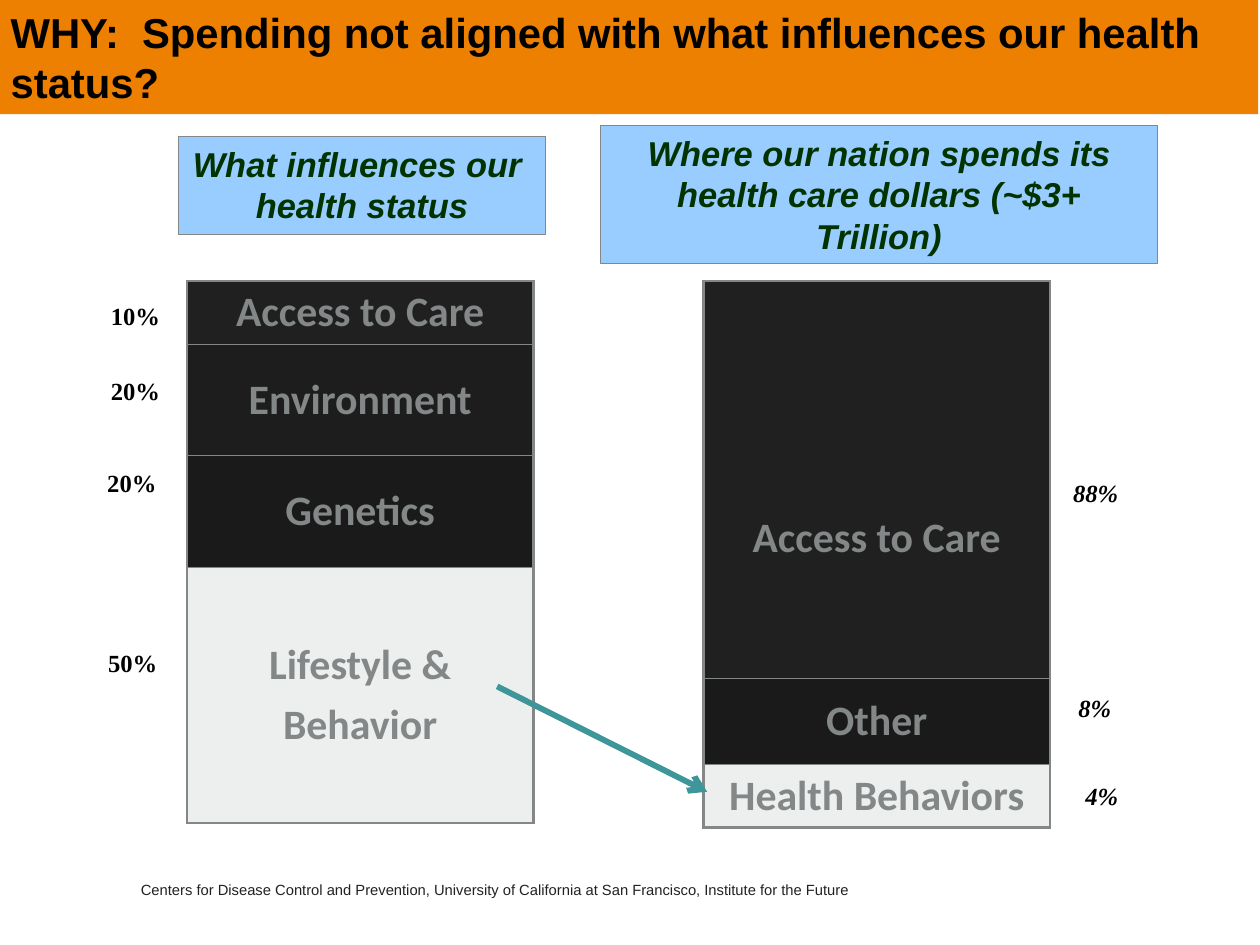
from lxml import etree
from pptx import Presentation
from pptx import util as u
from pptx.dml.color import RGBColor
from pptx.enum import shapes, text
from pptx.oxml import ns

PX = 9144
COLORS = {
    "banner": "ED8000", "heading": "99CCFF", "heading_text": "003300",
    "gray": "838787", "care": "202020", "environment": "1D1D1D",
    "dark": "1A1A1A", "light": "EDEEEE", "arrow": "3F969A",
    "black": "000000", "source": "222222",
}
INFLUENCES = [
    ("Access to Care", 71, "care", 0),
    ("Environment", 126, "environment", 0),
    ("Genetics", 126, "dark", 0),
    ("Lifestyle &\nBehavior", 289, "light", 0),
]
SPENDING = [
    ("Access to Care", 449, "care", 132),
    ("Other", 97, "dark", 0),
    ("Health Behaviors", 71, "light", 0),
]
INFLUENCE_SHARES = [("10%", 111, 333), ("20%", 111, 417), ("20%", 107, 521), ("50%", 108, 725)]
SPENDING_SHARES = [("88%", 1197, 533, 80), ("8%", 1203, 775, 66), ("4%", 1211, 875, 66)]


def px(*lengths):
    return [u.Emu(length * PX) for length in lengths]


def color(name):
    return RGBColor.from_string(COLORS[name])


def write(frame, content, font="Arial", size=34, ink="black", bold=True, italic=False,
          align=text.PP_ALIGN.LEFT, gap=0):
    for index, line in enumerate(content.split("\n")):
        para = frame.add_paragraph() if index else frame.paragraphs[0]
        para.alignment = align
        if index:
            para.space_before = u.Pt(gap)
        span = para.add_run()
        span.text = line
        span.font.name = font
        span.font.size = u.Pt(size)
        span.font.bold = bold
        span.font.italic = italic
        span.font.color.rgb = color(ink)


def set_insets(frame, side=14, end=7):
    frame.margin_left, frame.margin_right = px(side, side)
    frame.margin_top, frame.margin_bottom = px(end, end)


def add_panel(page, bounds, content, fill, line=None, **style):
    box = page.shapes.add_shape(shapes.MSO_SHAPE.RECTANGLE, *px(*bounds))
    box.shadow.inherit = False
    box.fill.solid()
    box.fill.fore_color.rgb = color(fill)
    if line:
        box.line.color.rgb = color(line)
        box.line.width = u.Pt(0.75)
    else:
        box.line.fill.background()
    frame = box.text_frame
    frame.word_wrap = True
    frame.vertical_anchor = text.MSO_ANCHOR.TOP
    set_insets(frame)
    write(frame, content, **style)


def add_label(page, bounds, content, wrap=False, anchor=text.MSO_ANCHOR.TOP,
              insets=(14, 7), **style):
    frame = page.shapes.add_textbox(*px(*bounds)).text_frame
    frame.word_wrap = wrap
    frame.vertical_anchor = anchor
    set_insets(frame, *insets)
    write(frame, content, **style)


def add_border(cell, side, width, position):
    properties = cell._tc.get_or_add_tcPr()
    line = etree.Element(ns.qn(f"a:ln{side}"), w=str(u.Pt(width)))
    fill = etree.SubElement(line, ns.qn("a:solidFill"))
    etree.SubElement(fill, ns.qn("a:srgbClr"), val=COLORS["gray"])
    properties.insert(position, line)


def add_stack(page, left, top, width, parts):
    height = sum(part[1] for part in parts)
    frame = page.shapes.add_table(len(parts), 1, *px(left, top, width, height))
    table = frame.table
    table.first_row = table.horz_banding = False
    last = len(parts) - 1
    for index, (content, row_height, fill, drop) in enumerate(parts):
        table.rows[index].height = px(row_height)[0]
        cell = table.cell(index, 0)
        set_insets(cell)
        cell.margin_top = px(7 + drop)[0]
        cell.vertical_anchor = text.MSO_ANCHOR.MIDDLE
        cell.fill.solid()
        cell.fill.fore_color.rgb = color(fill)
        widths = {"L": 2.25, "R": 2.25, "T": 1 if index else 2.25,
                  "B": 1 if index < last else 2.25}
        for position, (side, border) in enumerate(widths.items()):
            add_border(cell, side, border, position)
        write(cell.text_frame, content, font="Calibri", ink="gray",
              align=text.PP_ALIGN.CENTER, gap=6.8)


def add_arrow(page, start, end):
    arrow = page.shapes.add_connector(shapes.MSO_CONNECTOR.STRAIGHT, *px(*start, *end))
    arrow.line.color.rgb = color("arrow")
    arrow.line.width = u.Pt(4.75)
    etree.SubElement(arrow.line._get_or_add_ln(), ns.qn("a:tailEnd"), type="arrow")
    etree.SubElement(arrow._element.spPr, ns.qn("a:effectLst"))


def main():
    deck = Presentation()
    deck.slide_width, deck.slide_height = px(1422, 1067)
    page = deck.slides.add_slide(deck.slide_layouts[6])

    add_stack(page, 211, 317, 391, INFLUENCES)
    add_stack(page, 794, 317, 391, SPENDING)

    heading = dict(fill="heading", line="gray", size=28, ink="heading_text",
                   italic=True, align=text.PP_ALIGN.CENTER)
    add_panel(page, (201, 154, 415, 111), "What influences our \nhealth status", **heading)
    add_panel(page, (678, 142, 628, 156),
              "Where our nation spends its health care dollars (~$3+ Trillion)", **heading)

    share = dict(font="Times New Roman", size=20)
    for content, left, top in INFLUENCE_SHARES:
        add_label(page, (left, top, 85, 48), content, **share)
    for content, left, top, width in SPENDING_SHARES:
        add_label(page, (left, top, width, 48), content, italic=True, **share)

    add_arrow(page, (561, 775), (798, 894))
    add_panel(page, (-2, 0, 1422, 129),
              "WHY:  Spending not aligned with what influences our health status?", "banner")
    add_label(page, (153, 972, 1117, 65),
              "Centers for Disease Control and Prevention, University of California "
              "at San Francisco, Institute for the Future",
              wrap=True, anchor=text.MSO_ANCHOR.MIDDLE, insets=(6, 6),
              size=12, ink="source", bold=False)
    deck.save("out.pptx")


if __name__ == "__main__":
    main()
